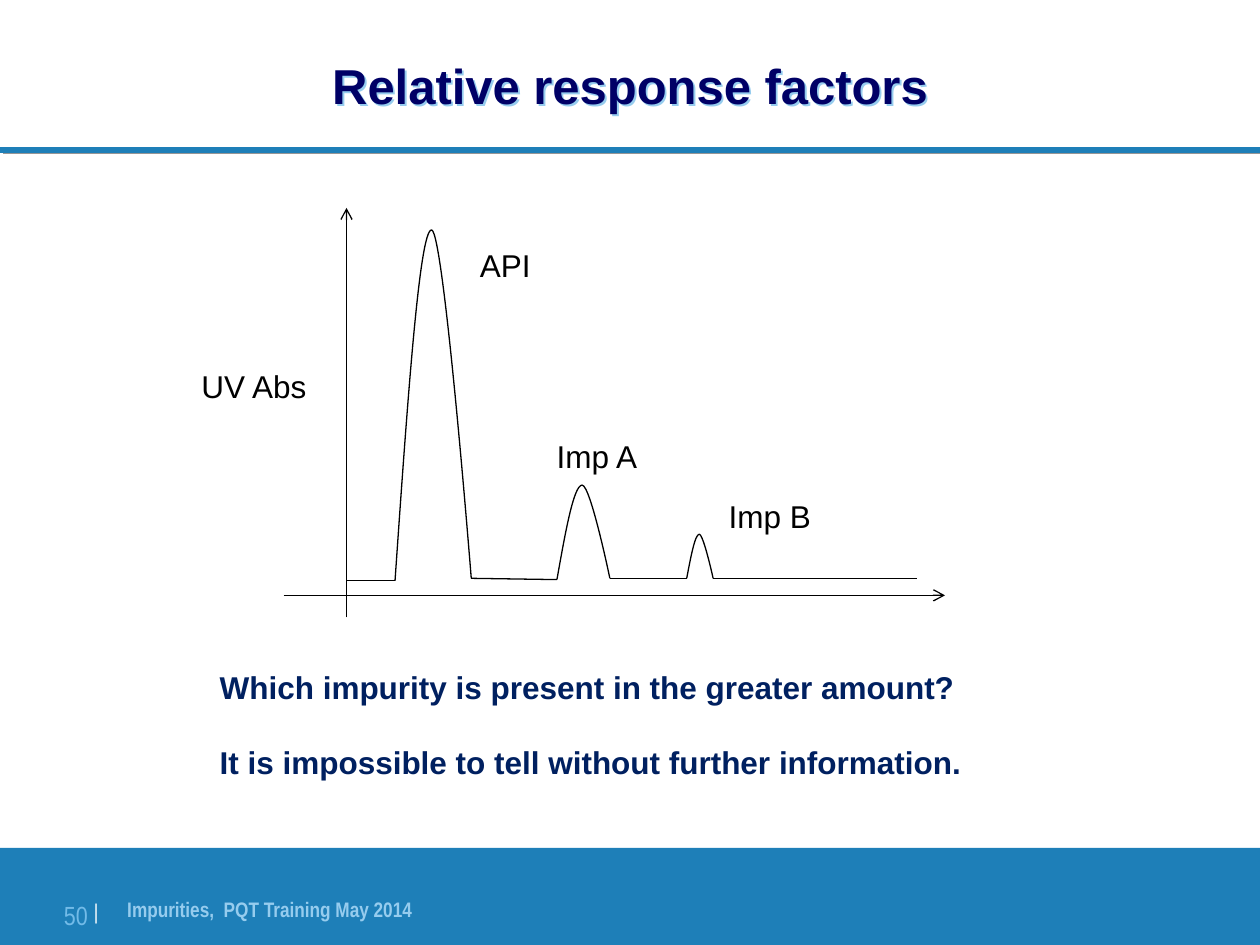
from lxml.etree import SubElement
from pptx import Presentation
from pptx.dml.color import RGBColor
from pptx.enum.shapes import MSO_CONNECTOR, MSO_SHAPE
from pptx.enum.text import MSO_ANCHOR, PP_ALIGN
from pptx.oxml.ns import qn
from pptx.util import Inches, Pt

COLS, ROWS = 1000, 750
WIDE, HIGH = Inches(10), Inches(7.5)
CELL = WIDE // COLS

HUES = {"band": "1E7FB8", "title": "000066", "note": "002060", "ink": "000000",
        "foot": "96CCEE", "page": "72BBE8", "bar": "FFFFFF", "shade": "969696"}

BODY = {"name": "Arial", "size": Pt(18)}
BOLD = {**BODY, "bold": True}
HEAD = {"name": "Arial", "size": Pt(28), "bold": True}
FOOT = {"name": "Arial Narrow", "size": Pt(12), "bold": True}
PAGE = {"name": "Arial Narrow", "size": Pt(15)}
TALL = {"name": "Arial Narrow", "size": Pt(21)}
BARE = dict.fromkeys(
    ("margin_left", "margin_right", "margin_top", "margin_bottom"), 0)


def tint(hue):
    return RGBColor.from_string(HUES[hue])


def cells(parts):
    """Turn grid cells into slide units."""
    return [int(CELL * part) for part in parts]


def style(item, form):
    for key, value in form.items():
        setattr(item, key, value)


def shade(shape, hue, gap, turn):
    """Add an outer shadow; gap is in points, turn in degrees."""
    shape.shadow.inherit = False
    effects = shape._element.spPr.find(qn("a:effectLst"))
    drop = SubElement(effects, qn("a:outerShdw"), dist=str(Pt(gap)),
                      dir=str(turn * 60000), algn="ctr", rotWithShape="0")
    SubElement(drop, qn("a:srgbClr"), val=HUES[hue])


def write(para, text, form, hue):
    run = para.add_run()
    run.text = text
    style(run.font, form)
    run.font.color.rgb = tint(hue)
    return run


def frame(slide, box, wrap=True, form=None):
    area = slide.shapes.add_textbox(*cells(box))
    area.text_frame.word_wrap = wrap
    style(area.text_frame, form or {})
    return area


def label(slide, text, box):
    area = frame(slide, box, wrap=False)
    write(area.text_frame.paragraphs[0], text, BODY, "ink")


def line(slide, start, end, hue="ink", width=0.75, arrow=False):
    rule = slide.shapes.add_connector(
        MSO_CONNECTOR.STRAIGHT, *cells(start + end))
    rule._element.remove(rule._element.find(qn("p:style")))
    rule.line.width = Pt(width)
    rule.line.color.rgb = tint(hue)
    if arrow:
        SubElement(rule.line._get_or_add_ln(), qn("a:tailEnd"), type="arrow")
    SubElement(rule._element.spPr, qn("a:effectLst"))
    return rule


def peak(slide, start, top, end):
    """Draw one smooth peak from two cubic curves that meet at its top."""
    third = (top[0] - start[0]) / 3
    rise = [(start[0] + third, (start[1] + top[1]) / 2),
            (top[0] - third, top[1]), top]
    fall = [(top[0] + third, top[1]), end, end]
    pen = slide.shapes.build_freeform(*cells(start))
    pen.add_line_segments([cells(top), cells(end)], close=False)
    shape = pen.convert_to_shape()
    left, high = cells((start[0], top[1]))
    steps = list(shape._element.iter(qn("a:lnTo")))
    for step, points in zip(steps, (rise, fall)):
        step.tag = qn("a:cubicBezTo")
        step.remove(step[0])
        for x, y in map(cells, points):
            SubElement(step, qn("a:pt"), x=str(x - left), y=str(y - high))
    shape.shadow.inherit = False
    shape.fill.background()
    shape.line.width = Pt(0.75)
    shape.line.color.rgb = tint("ink")


def header(slide, box):
    left, top, wide, high = box
    rule = line(slide, (left, top + 119), (left + wide, top + 119), "band", 3)
    shade(rule, "shade", 2.2, 27)
    area = frame(slide, box, form={**BARE, "vertical_anchor": MSO_ANCHOR.MIDDLE})
    shade(area, "foot", 1.6, 45)
    para = area.text_frame.paragraphs[0]
    para.alignment = PP_ALIGN.CENTER
    write(para, "Relative response factors", HEAD, "title")


def plot(slide, box):
    """Chromatogram: two axes, a baseline and three named peaks."""
    left, top, wide, high = box
    group = slide.shapes.add_group_shape()

    def at(col, row):
        return left + col, top + row

    line(group, at(50, high), at(50, 0), arrow=True)
    line(group, at(0, 307.5), at(wide, 307.5), arrow=True)
    peaks = [(at(88.5, 296), at(117.5, 17.5), at(149, 294)),
             (at(217, 295), at(237, 220), at(259, 294)),
             (at(320, 294), at(330, 259), at(341, 294))]
    for points in peaks:
        peak(group, *points)
    starts = [at(50, 296)] + [points[2] for points in peaks]
    ends = [points[0] for points in peaks] + [at(503, 294)]
    for start, end in zip(starts, ends):
        line(group, start, end)
    for text, col, row, span in (("API", 146, 25, 61), ("Imp A", 207, 177, 85),
                                 ("Imp B", 343.5, 224.5, 86)):
        label(group, text, (*at(col, row), span, 40))
    label(slide, "UV Abs", (*at(-75, 121.5), 104, 40))


def notes(slide, box):
    area = frame(slide, box).text_frame
    write(area.paragraphs[0], "Which impurity is present in the greater amount?",
          BOLD, "note")
    para = area.add_paragraph()
    para.space_before = Pt(21.5)
    write(para, "It is impossible to tell without further information.",
          BOLD, "note")


def footer(slide, box):
    left, top, wide, high = box
    band = slide.shapes.add_shape(MSO_SHAPE.RECTANGLE, *cells(box))
    band.shadow.inherit = False
    band.fill.solid()
    band.fill.fore_color.rgb = tint("band")
    band.line.fill.background()
    area = frame(slide, (left + 101, top + 38.5, 525, 31), form=BARE)
    write(area.text_frame.paragraphs[0], "Impurities,  PQT Training May 2014",
          FOOT, "foot")
    area = frame(slide, (left + 39, top + 32, 39, 36), form=BARE)
    para = area.text_frame.paragraphs[0]
    para.alignment = PP_ALIGN.RIGHT
    write(para, "50 ", PAGE, "page")
    bar = write(para, "|", TALL, "bar")
    bar.font._element.set("baseline", "14000")


def main():
    deck = Presentation()
    style(deck, {"slide_width": WIDE, "slide_height": HIGH})
    slide = deck.slides.add_slide(deck.slide_layouts[6])
    footer(slide, (0, 673, COLS, ROWS - 673))
    header(slide, (0, 0, COLS, 135))
    plot(slide, (225, 165, 525, 325))
    notes(slide, (164.5, 525, 671, 101))
    deck.save("out.pptx")


if __name__ == "__main__":
    main()
